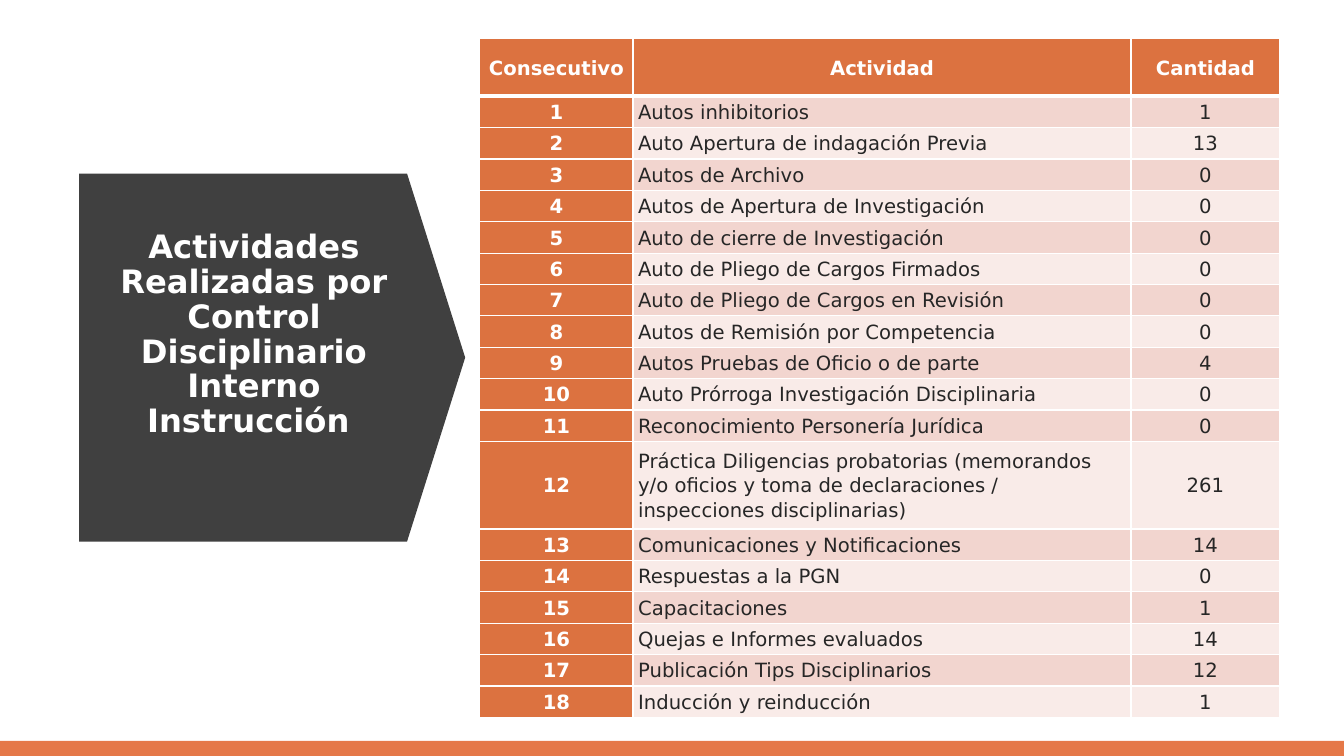
"""Build the slide listing the disciplinary control activities and their counts."""
import pptx
import pptx.util
import pptx.dml.color
import pptx.enum.shapes
import pptx.enum.text
import pptx.oxml

Pt = pptx.util.Pt
Align = pptx.enum.text.PP_ALIGN
Anchor = pptx.enum.text.MSO_ANCHOR
Shape = pptx.enum.shapes.MSO_SHAPE
FONT = "DejaVu Sans"
COLORS = {
    "band": "E57848",
    "arrow": "404040",
    "header": "DC7240",
    "odd": "F2D5CF",
    "even": "F9EBE8",
    "text": "262626",
    "white": "FFFFFF",
}
ACTIVITIES = [
    ("Autos inhibitorios", 1),
    ("Auto Apertura de indagación Previa", 13),
    ("Autos de Archivo", 0),
    ("Autos de Apertura de Investigación", 0),
    ("Auto de cierre de Investigación", 0),
    ("Auto de Pliego de Cargos Firmados", 0),
    ("Auto de Pliego de Cargos en Revisión", 0),
    ("Autos de Remisión por Competencia", 0),
    ("Autos Pruebas de Oficio o de parte", 4),
    ("Auto Prórroga Investigación Disciplinaria", 0),
    ("Reconocimiento Personería Jurídica", 0),
    ("Práctica Diligencias probatorias (memorandos y/o oficios y toma de "
     "declaraciones / inspecciones disciplinarias)", 261),
    ("Comunicaciones y Notificaciones", 14),
    ("Respuestas a la PGN", 0),
    ("Capacitaciones", 1),
    ("Quejas e Informes evaluados", 14),
    ("Publicación Tips Disciplinarios", 12),
    ("Inducción y reinducción", 1),
]
LONG_ROW = 12


def add_span(para, text, size, color, bold):
    span = para.add_run()
    span.text = text
    span.font.name = FONT
    span.font.size = Pt(size)
    span.font.bold = bold
    span.font.color.rgb = pptx.dml.color.RGBColor.from_string(COLORS[color])


def paint(item, color):
    item.fill.solid()
    item.fill.fore_color.rgb = pptx.dml.color.RGBColor.from_string(COLORS[color])


deck = pptx.Presentation()
deck.slide_width, deck.slide_height = Pt(960), Pt(540)
page = deck.slides.add_slide(deck.slide_layouts[5])

band = page.shapes.add_shape(Shape.RECTANGLE, Pt(0), Pt(529.2), Pt(960), Pt(10.8))
arrow = page.shapes.add_shape(Shape.DOWN_ARROW, Pt(63), Pt(117.5), Pt(262.8), Pt(275.8))
arrow.rotation = 270
arrow.adjustments[0], arrow.adjustments[1] = 1, 0.158
for shape, color in ((band, "band"), (arrow, "arrow")):
    paint(shape, color)
    shape.line.fill.background()
    shape.shadow.inherit = False

title = page.shapes.title
arrow.element.addnext(title.element)
title.left, title.top, title.width, title.height = Pt(77.8), Pt(165), Pt(207.4), Pt(206)
frame = title.text_frame
frame.word_wrap = True
frame.auto_size = pptx.enum.text.MSO_AUTO_SIZE.NONE
frame.vertical_anchor = Anchor.TOP
frame.margin_top = 0
para = frame.paragraphs[0]
para.alignment = Align.CENTER
para.line_spacing = 0.9
add_span(para, "Actividades Realizadas por Control Disciplinario Interno Instrucción ",
         23, "white", True)

rows = [("Consecutivo", "Actividad", "Cantidad")]
rows += [(number, name, count) for number, (name, count) in enumerate(ACTIVITIES, 1)]
table = page.shapes.add_table(len(rows), 3, Pt(342.7), Pt(27.7), Pt(571.6), Pt(485.3)).table
for column, width in zip(table.columns, (109.5, 355.7, 106.4)):
    column.width = Pt(width)
for r, values in enumerate(rows):
    table.rows[r].height = Pt({0: 41, LONG_ROW: 62.6}.get(r, 22.45))
    for c, value in enumerate(values):
        cell = table.cell(r, c)
        heading = r == 0 or c == 0
        cell.vertical_anchor = Anchor.MIDDLE
        cell.margin_left = cell.margin_right = Pt(3.6)
        cell.margin_top = cell.margin_bottom = 0
        properties = cell._tc.get_or_add_tcPr()
        for side in "LRTB":
            thick = (r, side) in ((0, "B"), (1, "T"))
            properties.append(pptx.oxml.parse_xml(
                f'<a:ln{side} xmlns:a="http://schemas.openxmlformats.org/drawingml/2006/main" '
                f'w="{Pt(3 if thick else 1)}"><a:solidFill><a:srgbClr val="{COLORS["white"]}"/>'
                f'</a:solidFill></a:ln{side}>'))
        paint(cell, "header" if heading else "odd" if r % 2 else "even")
        para = cell.text_frame.paragraphs[0]
        para.alignment = Align.LEFT if c == 1 and r else Align.CENTER
        para.line_spacing = 1.07
        add_span(para, str(value), 14, "white" if heading else "text", heading)

deck.save("out.pptx")
